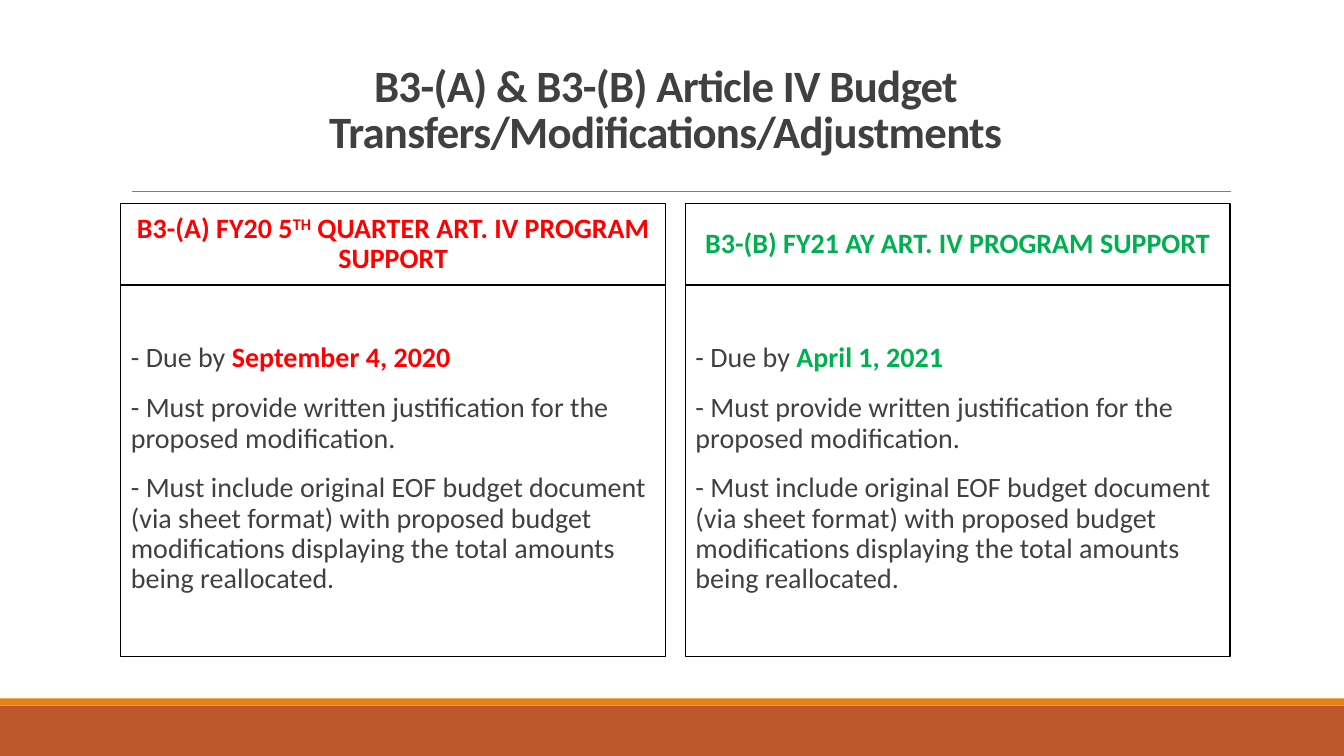
from dataclasses import dataclass

from lxml.etree import SubElement
from pptx import Presentation
from pptx.dml.color import RGBColor
from pptx.enum.shapes import MSO_CONNECTOR, MSO_SHAPE
from pptx.enum.text import MSO_ANCHOR, PP_ALIGN
from pptx.oxml.ns import qn
from pptx.shapes.autoshape import Shape
from pptx.slide import Slide
from pptx.text.text import TextFrame, _Paragraph as Paragraph, _Run as Run
from pptx.util import Inches, Pt

RUST = RGBColor(0xBD, 0x58, 0x2C)
ORANGE = RGBColor(0xE4, 0x83, 0x12)
GRAY = RGBColor(0x80, 0x80, 0x80)
DARK = RGBColor(0x40, 0x40, 0x40)
BLACK = RGBColor(0, 0, 0)
RED = RGBColor(0xFF, 0, 0)
GREEN = RGBColor(0, 0xB0, 0x50)

FONT = "Calibri"
SLIDE_W, SLIDE_H = 13.33, 7.5
PANEL_LEFT, PANEL_W, PANEL_STEP = 1.2, 5.4, 5.6
HEAD_TOP, HEAD_H = 2.02, 0.81
BODY_TOP, BODY_H = 2.82, 3.69
REQUIREMENTS = (
    "- Must provide written justification for the proposed modification.",
    "- Must include original EOF budget document (via sheet format) with proposed "
    "budget modifications displaying the total amounts being reallocated.",
)


@dataclass
class Panel:
    heading: tuple[str, ...]  # every second part is superscript
    due: str
    accent: RGBColor


@dataclass
class Band:
    top: float
    height: float
    color: RGBColor


PANELS = (
    Panel(("B3-(A) FY20 5", "TH", " QUARTER ART. IV PROGRAM SUPPORT"),
          "September 4, 2020", RED),
    Panel(("B3-(B) FY21 AY ART. IV PROGRAM SUPPORT",), "April 1, 2021", GREEN),
)
BANDS = (Band(7, 0.5, RUST), Band(6.93, 0.07, ORANGE))


def add_run(p: Paragraph, text: str, color: RGBColor,
            bold: bool = False, size: float = 20) -> Run:
    r = p.add_run()
    r.text = text
    r.font.name = FONT
    r.font.size = Pt(size)
    r.font.bold = bold
    r.font.color.rgb = color
    return r


def style_paragraph(p: Paragraph, align: PP_ALIGN) -> None:
    p.alignment = align
    p.line_spacing = 0.9
    p.space_before = Pt(12)
    p.space_after = Pt(2)


def add_rect(slide: Slide, left: float, top: float, width: float, height: float) -> Shape:
    sp = slide.shapes.add_shape(MSO_SHAPE.RECTANGLE, Inches(left), Inches(top),
                                Inches(width), Inches(height))
    sp.shadow.inherit = False
    return sp


def add_band(slide: Slide, band: Band) -> None:
    sp = add_rect(slide, 0, band.top, SLIDE_W, band.height)
    sp.fill.solid()
    sp.fill.fore_color.rgb = band.color
    sp.line.fill.background()


def add_frame(slide: Slide, left: float, top: float, height: float,
              anchor: MSO_ANCHOR) -> TextFrame:
    """Add an outlined, unfilled box and return its text frame."""
    sp = add_rect(slide, left, top, PANEL_W, height)
    sp.fill.background()
    sp.line.color.rgb = BLACK
    sp.line.width = Pt(0.75)
    tf = sp.text_frame
    tf.word_wrap = True
    tf.vertical_anchor = anchor
    return tf


def add_panel(slide: Slide, panel: Panel, left: float) -> None:
    p = add_frame(slide, left, HEAD_TOP, HEAD_H, MSO_ANCHOR.MIDDLE).paragraphs[0]
    style_paragraph(p, PP_ALIGN.CENTER)
    for i, part in enumerate(panel.heading):
        r = add_run(p, part, panel.accent, bold=True)
        if i % 2:
            r.font._element.set("baseline", "30000")

    tf = add_frame(slide, left, BODY_TOP, BODY_H, MSO_ANCHOR.TOP)
    tf.margin_left, tf.margin_right = Inches(0.1), 0
    tf.margin_top = Inches(0.59)
    p = tf.paragraphs[0]
    style_paragraph(p, PP_ALIGN.LEFT)
    add_run(p, "- Due by ", DARK)
    add_run(p, panel.due, panel.accent, bold=True)
    for text in REQUIREMENTS:
        p = tf.add_paragraph()
        style_paragraph(p, PP_ALIGN.LEFT)
        add_run(p, text, DARK)


def add_title_rule(slide: Slide) -> None:
    line = slide.shapes.add_connector(MSO_CONNECTOR.STRAIGHT, Inches(1.31), Inches(1.9),
                                      Inches(12.21), Inches(1.9))
    line.line.color.rgb = GRAY
    line.line.width = Pt(0.5)
    SubElement(line._element.spPr, qn("a:effectLst"))


def add_title(slide: Slide, text: str) -> None:
    box = slide.shapes.add_textbox(Inches(1.46), Inches(0.46), Inches(10.28), Inches(1.15))
    tf = box.text_frame
    tf.word_wrap = True
    tf.vertical_anchor = MSO_ANCHOR.BOTTOM
    p = tf.paragraphs[0]
    p.alignment = PP_ALIGN.CENTER
    p.line_spacing = 0.85
    r = add_run(p, text, DARK, bold=True, size=32)
    r.font._element.set("spc", "-50")


def main() -> None:
    prs = Presentation()
    prs.slide_width, prs.slide_height = Inches(SLIDE_W), Inches(SLIDE_H)
    slide = prs.slides.add_slide(prs.slide_layouts[6])
    for band in BANDS:
        add_band(slide, band)
    add_title_rule(slide)
    for i, panel in enumerate(PANELS):
        add_panel(slide, panel, PANEL_LEFT + i * PANEL_STEP)
    add_title(slide, "B3-(A) & B3-(B) Article IV Budget Transfers/Modifications/Adjustments")
    prs.save("out.pptx")


if __name__ == "__main__":
    main()
